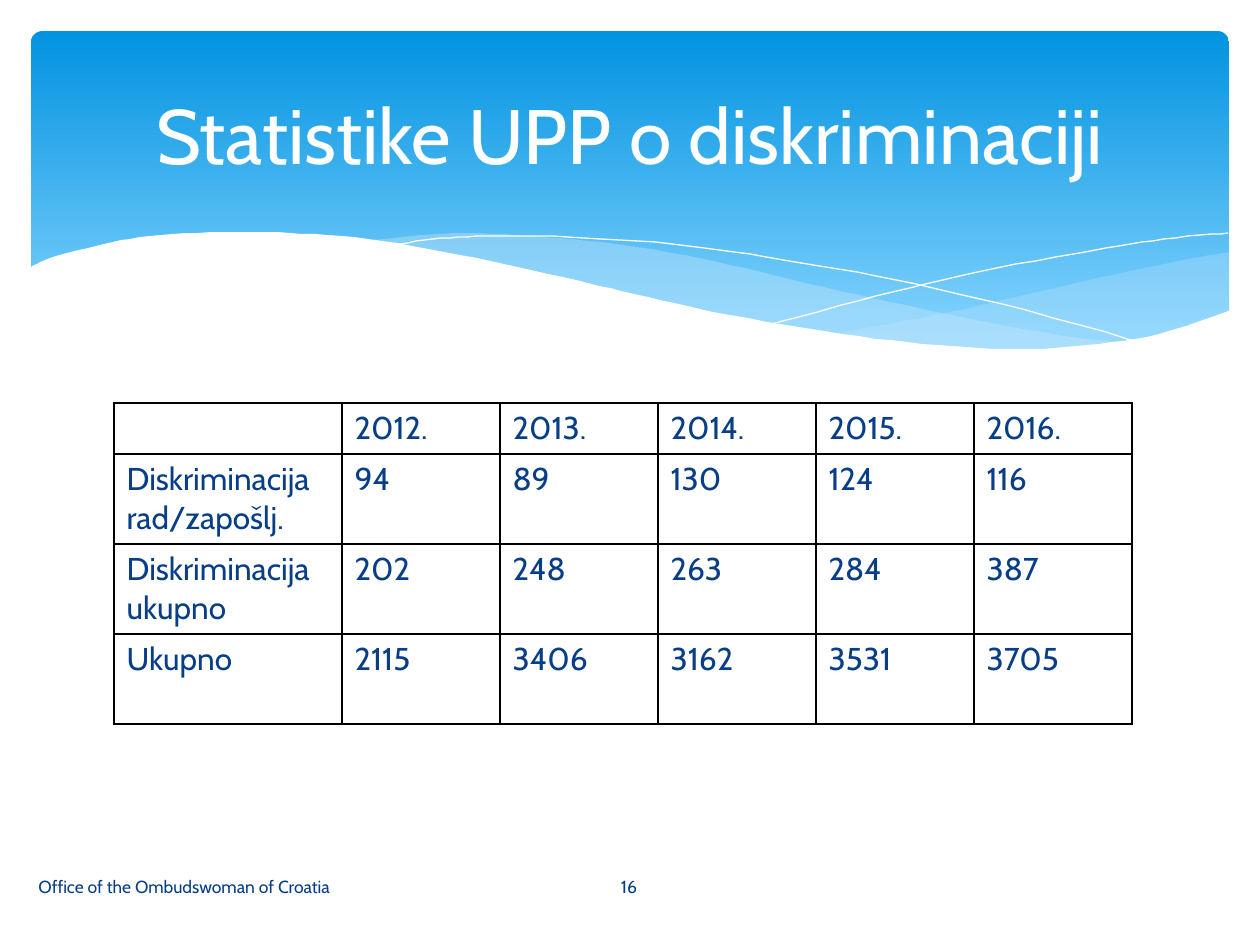
import pptx
import pptx.dml.color
import pptx.enum.shapes
import pptx.enum.text
import pptx.oxml
import pptx.oxml.ns
import pptx.util

RGB = pptx.dml.color.RGBColor
WHITE = RGB(0xFF, 0xFF, 0xFF)
NAVY = RGB(0x07, 0x3E, 0x87)
BLUE = RGB(0x02, 0x93, 0xE0)
SKY = RGB(0x83, 0xD3, 0xFE)
PALE = RGB(0xC6, 0xE7, 0xFC)

PX = 914400 / 126
ALIGN = pptx.enum.text.PP_ALIGN
MIDDLE = pptx.enum.text.MSO_ANCHOR.MIDDLE
NS = pptx.oxml.ns.nsdecls("a")


def px(*values):
    return [pptx.util.Emu(round(v * PX)) for v in values]


def smooth(knots, steps=6):
    """Points of a Catmull-Rom curve through the knots."""
    ends = [knots[0], *knots, knots[-1]]
    points = [knots[0]]
    for a, b, c, d in zip(ends, ends[1:], ends[2:], ends[3:]):
        for t in (i / steps for i in range(1, steps + 1)):
            points.append(tuple(
                (2 * q + (r - p) * t + (2 * p - 5 * q + 4 * r - s) * t ** 2
                 + (3 * q - p - 3 * r + s) * t ** 3) / 2
                for p, q, r, s in zip(a, b, c, d)))
    return points


class Deck:
    font = "Cabin"

    def __init__(self, width, height):
        self.prs = pptx.Presentation()
        self.prs.slide_width, self.prs.slide_height = px(width, height)
        self.s = self.prs.slides.add_slide(self.prs.slide_layouts[5])

    def style(self, tf, size, color, align=ALIGN.LEFT):
        fmt = {"name": self.font, "size": pptx.util.Pt(size), "bold": False}
        for p in tf.paragraphs:
            p.alignment = align
            for r in p.runs:
                for key, value in fmt.items():
                    setattr(r.font, key, value)
                r.font.color.rgb = color

    def title(self, text, box, size, color):
        sp = self.s.shapes.title
        self.s.shapes._spTree.append(sp._element)  # bring to front
        sp.left, sp.top, sp.width, sp.height = px(*box)
        sp.text_frame.text = text
        sp.text_frame.vertical_anchor = MIDDLE
        self.style(sp.text_frame, size, color, ALIGN.CENTER)

    def text(self, text, box, size, color, align=ALIGN.LEFT):
        tf = self.s.shapes.add_textbox(*px(*box)).text_frame
        tf.word_wrap = True
        tf.vertical_anchor = MIDDLE
        tf.text = text
        self.style(tf, size, color, align)

    def banner(self, box, top, bottom, radius):
        kind = pptx.enum.shapes.MSO_SHAPE.ROUNDED_RECTANGLE
        sp = self.s.shapes.add_shape(kind, *px(*box))
        sp.adjustments[0] = radius
        sp.shadow.inherit = False
        sp.line.fill.background()
        sp.fill.gradient()
        sp.fill.gradient_angle = 270
        stops = zip(sp.fill.gradient_stops, (0, 0.9), (top, bottom))
        for stop, position, color in stops:
            stop.position = position
            stop.color.rgb = color

    def freeform(self, points, closed):
        fb = self.s.shapes.build_freeform(*points[0], scale=PX)
        fb.add_line_segments(points[1:], close=closed)
        sp = fb.convert_to_shape()
        sp.shadow.inherit = False
        return sp

    def wave(self, points, color, alpha=100):
        sp = self.freeform(points, True)
        sp.line.fill.background()
        sp.fill.solid()
        sp.fill.fore_color.rgb = color
        if alpha < 100:
            clr = sp._element.spPr.find(".//" + pptx.oxml.ns.qn("a:srgbClr"))
            clr.append(pptx.oxml.parse_xml(f'<a:alpha {NS} val="{alpha * 1000}"/>'))

    def curve(self, knots, color):
        sp = self.freeform(smooth(knots), False)
        sp.fill.background()
        sp.line.color.rgb = color
        sp.line.width = 0

    def table(self, rows, left, top, widths, heights, size, color):
        frame = self.s.shapes.add_table(
            len(rows), len(widths),
            *px(left, top, sum(widths), sum(heights)))
        tbl = frame.table
        tbl.first_row = tbl.horz_banding = False
        for col, width in zip(tbl.columns, px(*widths)):
            col.width = width
        for row, height, values in zip(tbl.rows, px(*heights), rows):
            row.height = height
            for cell, value in zip(row.cells, values):
                cell.text = value
                self.style(cell.text_frame, size, color)
                self.borders(cell)
                cell.fill.background()

    def borders(self, cell):
        tcPr = cell._tc.get_or_add_tcPr()
        for side in "LRTB":
            tcPr.append(pptx.oxml.parse_xml(
                f'<a:ln{side} {NS} w="12700"><a:solidFill>'
                f'<a:srgbClr val="000000"/></a:solidFill></a:ln{side}>'))


def main():
    deck = Deck(1260, 945)

    # Banner with translucent waves and thin curves
    deck.banner((31, 31, 1198, 340), BLUE, SKY, 0.034)
    deck.wave(
        smooth([(1230, 252), (1178, 261), (1085, 281), (982, 305), (890, 324),
                (833, 334)])
        + smooth([(833, 334), (906, 343), (969, 349), (1038, 350), (1110, 344),
                  (1178, 330), (1230, 311)]), PALE, 29)
    deck.wave(
        smooth([(1125, 344), (1017, 328), (890, 302), (793, 280), (699, 258),
                (616, 244), (529, 236), (455, 233), (360, 241)])
        + smooth([(360, 241), (456, 256), (566, 280), (668, 302), (779, 325),
                  (876, 340), (959, 349), (1043, 350), (1125, 344)]), PALE, 40)
    deck.curve([(389, 246), (433, 239), (488, 236), (567, 237), (672, 244),
                (766, 257), (876, 276), (1002, 304), (1143, 343)], WHITE)
    deck.curve([(772, 324), (876, 296), (978, 272), (1091, 251), (1164, 239),
                (1228, 233)], WHITE)

    # White wave that cuts the banner's lower edge
    deck.wave(
        smooth([(1231, 310), (1159, 334), (1087, 345), (1019, 349), (937, 345),
                (842, 334), (730, 315), (634, 294), (563, 277), (460, 255),
                (368, 239), (290, 233), (223, 232), (150, 236), (96, 246),
                (50, 258), (29, 268)])
        + [(29, 415), (1231, 415)], WHITE)

    # Yearly figures
    rows = [
        ("", "2012.", "2013.", "2014.", "2015.", "2016."),
        ("Diskriminacija rad/zapošlj.", "94", "89", "130", "124", "116"),
        ("Diskriminacija\nukupno", "202", "248", "263", "284", "387"),
        ("Ukupno", "2115", "3406", "3162", "3531", "3705"),
    ]
    deck.table(rows, 114, 403, [228] + [158] * 5, [51] + [90] * 3, 18, NAVY)

    # Title and footer
    deck.title("Statistike UPP o diskriminaciji", (63, 47, 1134, 173), 44, WHITE)
    deck.text("Office of the Ombudswoman of Croatia", (26, 862, 522, 50), 10, NAVY)
    deck.text("16", (549, 862, 160, 50), 10, NAVY, ALIGN.CENTER)

    deck.prs.save("out.pptx")


if __name__ == "__main__":
    main()
